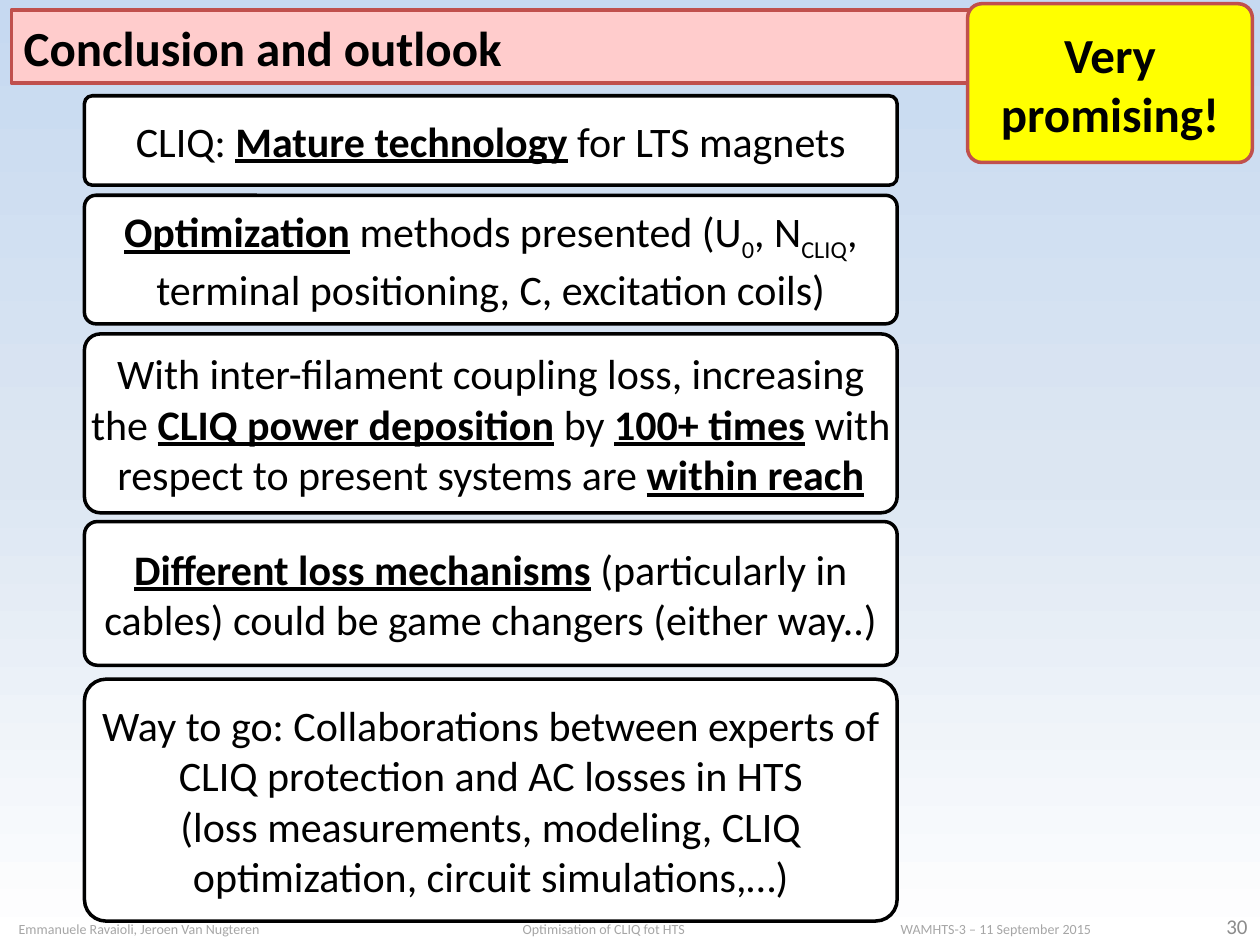
import copy
import pptx
import pptx.util
import pptx.dml.color
import pptx.enum.shapes
import pptx.enum.text
import pptx.oxml.ns
from lxml import etree

Pt = pptx.util.Pt
SHAPE = pptx.enum.shapes.MSO_SHAPE
ALIGN = pptx.enum.text.PP_ALIGN
HUES = {
    "sky": "C6D9F1", "mist": "DCE6F2", "white": "FFFFFF", "pink": "FFCCCC",
    "red": "C0504D", "black": "000000", "yellow": "FFFF00",
    "page": "8C8C8C", "foot": "A6A6A6",
}
POINTS = [
    (54.72, 51.12, ["CLIQ: |*Mature technology| for LTS magnets"]),
    (111.6, 73.44, ["*Optimization| methods presented (U|_0|, N|_CLIQ"
                    "|, terminal positioning, C, excitation coils)"]),
    (190.8, 102.24, ["With inter-filament coupling loss, increasing the "
                     "|*CLIQ power deposition| by |*100+ times"
                     "| with respect to present systems are |*within reach"]),
    (298.08, 82.08, ["*Different loss mechanisms| (particularly in cables) "
                     "could be game changers (either way..)"]),
    (388.08, 138.24, ["Way to go: Collaborations between experts of CLIQ "
                      "protection and AC losses in HTS",
                      "(loss measurements, modeling, CLIQ optimization, "
                      "circuit simulations,…)"]),
]


def hue(name):
    return pptx.dml.color.RGBColor.from_string(HUES[name])


def style(run, size, color, bold=False):
    run.font.name = "Calibri"
    run.font.size = Pt(size)
    run.font.color.rgb = hue(color)
    run.font.bold = bold


def setup(frame, side):
    frame.word_wrap = True
    frame.vertical_anchor = pptx.enum.text.MSO_ANCHOR.MIDDLE
    frame.margin_left = frame.margin_right = Pt(side)


def panel(slide, box, kind, fill, line, side=0):
    shape = slide.shapes.add_shape(kind, *map(Pt, box))
    shape.shadow.inherit = False
    shape.fill.solid()
    shape.fill.fore_color.rgb = hue(fill)
    shape.line.color.rgb = hue(line)
    shape.line.width = Pt(2)
    if kind == SHAPE.ROUNDED_RECTANGLE:
        shape.adjustments[0] = 0.089
    setup(shape.text_frame, side)
    return shape.text_frame


def write(para, text, size, color, align, bold=False):
    para.text = text
    para.alignment = align
    style(para.runs[0], size, color, bold)


def rich(para, text):
    para.alignment = ALIGN.CENTER
    for part in text.split("|"):
        run = para.add_run()
        run.text = part.lstrip("*_")
        strong = part.startswith("*")
        style(run, 24, "black", strong)
        run.font.underline = strong
        if part.startswith("_"):
            run.font._element.set("baseline", "-25000")


def backdrop(slide):
    fill = slide.background.fill
    fill.gradient()
    fill.gradient_angle = 270
    stops = next(slide.element.iter(pptx.oxml.ns.qn("a:gsLst")))
    stops.append(copy.deepcopy(stops[-1]))
    for stop, place, name in zip(fill.gradient_stops, (0, 0.5, 1),
                                 ("sky", "mist", "white")):
        stop.position = place
        stop.color.rgb = hue(name)


def title(slide, box):
    frame = panel(slide, box, SHAPE.RECTANGLE, "pink", "red", 7.2)
    write(frame.paragraphs[0], "Conclusion and outlook", 28, "black",
          ALIGN.LEFT, True)


def footer(slide, box):
    left, top, width, height = box
    page = slide.shapes.add_textbox(Pt(left + 673.92), Pt(top - 5.76),
                                    Pt(42.48), Pt(20.16))
    setup(page.text_frame, 7.2)
    write(page.text_frame.paragraphs[0], "30", 12, "page", ALIGN.RIGHT)

    credit = slide.shapes.add_textbox(*map(Pt, box))
    setup(credit.text_frame, 7.2)
    para = credit.text_frame.paragraphs[0]
    write(para, "Emmanuele Ravaioli, Jeroen Van Nugteren\tOptimisation of "
          "CLIQ fot HTS\tWAMHTS-3 – 11 September 2015", 8, "foot", ALIGN.LEFT)
    qn = pptx.oxml.ns.qn
    tabs = etree.SubElement(para._p.get_or_add_pPr(), qn("a:tabLst"))
    for place in (288, 504):
        etree.SubElement(tabs, qn("a:tab"), pos=str(Pt(place)), algn="l")


def points(slide, box):
    left, top, width, height = box
    first = POINTS[0][0]
    for place, tall, lines in POINTS:
        frame = panel(slide, (left, top + place - first, width, tall),
                      SHAPE.ROUNDED_RECTANGLE, "white", "black")
        for i, line in enumerate(lines):
            rich(frame.add_paragraph() if i else frame.paragraphs[0], line)


def badge(slide, box):
    frame = panel(slide, box, SHAPE.ROUNDED_RECTANGLE, "yellow", "red")
    write(frame.paragraphs[0], "Very promising!", 28, "black",
          ALIGN.CENTER, True)


def main():
    deck = pptx.Presentation()
    deck.slide_width, deck.slide_height = Pt(720), Pt(540)
    slide = deck.slides.add_slide(deck.slide_layouts[6])
    backdrop(slide)
    title(slide, (6.48, 5.76, 707.76, 41.76))
    footer(slide, (3.6, 524.88, 707.76, 12.24))
    points(slide, (48.24, 54.72, 464.4, 471.6))
    badge(slide, (552.96, 2.16, 162.72, 90.72))
    deck.save("out.pptx")


if __name__ == "__main__":
    main()
